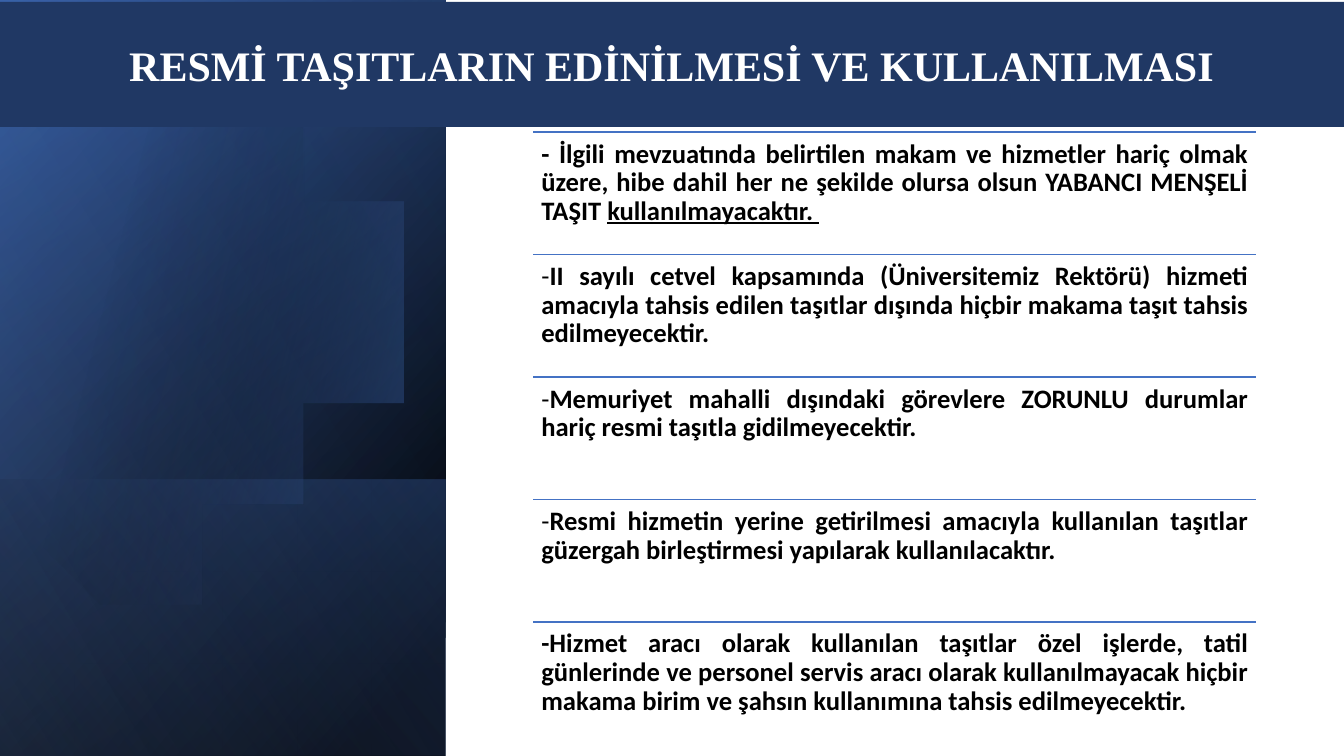
import math

import pptx
import pptx.dml.color
import pptx.enum.shapes
import pptx.enum.text
import pptx.oxml.ns
import pptx.util
from lxml import etree

WIDTH, HEIGHT = 13.33, 7.5
PANEL_WIDTH = 4.42
RULES_LEFT, RULES_TOP, RULES_WIDTH, RULE_STEP = 5.29, 1.31, 7.17, 1.215
BLACK, WHITE, NAVY, BLUE = "000000", "FFFFFF", "203864", "4472C4"
RECTANGLE = pptx.enum.shapes.MSO_SHAPE.RECTANGLE
ALIGN = pptx.enum.text.PP_ALIGN
ANCHOR = pptx.enum.text.MSO_ANCHOR
qn = pptx.oxml.ns.qn

# Each rule is a list of (text, bold, underline)
RULES = [
    [("- İlgili mevzuatında belirtilen makam ve hizmetler hariç olmak üzere, "
      "hibe dahil her ne şekilde olursa olsun YABANCI MENŞELİ TAŞIT ", True, False),
     ("kullanılmayacaktır. ", True, True)],
    [("-", False, False),
     ("II sayılı cetvel kapsamında (Üniversitemiz Rektörü) hizmeti amacıyla tahsis "
      "edilen taşıtlar dışında hiçbir makama taşıt tahsis edilmeyecektir.", True, False)],
    [("-", False, False),
     ("Memuriyet mahalli dışındaki görevlere ZORUNLU durumlar hariç resmi taşıtla "
      "gidilmeyecektir.", True, False)],
    [("-", False, False),
     ("Resmi hizmetin yerine getirilmesi amacıyla kullanılan taşıtlar güzergah "
      "birleştirmesi yapılarak kullanılacaktır. ", True, False)],
    [("-Hizmet aracı olarak kullanılan taşıtlar özel işlerde, tatil günlerinde ve "
      "personel servis aracı olarak kullanılmayacak hiçbir makama birim ve şahsın "
      "kullanımına tahsis edilmeyecektir. ", True, False)],
]


def inches(*lengths):
    return [pptx.util.Inches(length) for length in lengths]


def color(hex_value):
    return pptx.dml.color.RGBColor.from_string(hex_value)


def plain(shape):
    shape.shadow.inherit = False
    shape.line.fill.background()
    return shape


def block(slide, left, top, width, height, fill):
    shape = plain(slide.shapes.add_shape(RECTANGLE, *inches(left, top, width, height)))
    shape.fill.solid()
    shape.fill.fore_color.rgb = color(fill)
    return shape


def shade(shape, angle, *stops):
    """Fill with two stops (position %, colour, opacity %) at a clockwise angle."""
    shape.fill.gradient()
    shape.fill.gradient_angle = 360 - angle
    for stop, (position, hex_value, _) in zip(shape.fill.gradient_stops, stops):
        stop.position = position / 100
        stop.color.rgb = color(hex_value)
    fills = shape._element.spPr.iter(qn("a:srgbClr"))
    for node, (_, _, opacity) in zip(fills, stops):
        if opacity < 100:
            etree.SubElement(node, qn("a:alpha")).set("val", str(opacity * 1000))


def panel_layer(slide, top, height, angle, *stops):
    """A mirrored quarter-turned rectangle that covers the left panel from top down."""
    left = (PANEL_WIDTH - height) / 2
    turned_top = top + (height - PANEL_WIDTH) / 2
    layer = plain(slide.shapes.add_shape(
        RECTANGLE, *inches(left, turned_top, height, PANEL_WIDTH)))
    layer.rotation = 90
    layer._element.spPr.find(qn("a:xfrm")).set("flipH", "1")
    shade(layer, angle, *stops)


def clipped_disc(slide, center_x, center_y, radius, cut_x, angle, *stops):
    """A disc cut off by a vertical chord at cut_x."""
    reach = math.acos((cut_x - center_x) / radius)
    steps = 90
    arc = [(center_x + radius * math.cos(turn), center_y + radius * math.sin(turn))
           for turn in (reach * (2 * i / steps - 1) for i in range(steps + 1))]
    builder = slide.shapes.build_freeform(*arc[0], scale=pptx.util.Inches(1))
    builder.add_line_segments(arc[1:], close=True)
    shade(plain(builder.convert_to_shape()), angle, *stops)


def separator(slide, left, top, width):
    line = slide.shapes.add_connector(
        pptx.enum.shapes.MSO_CONNECTOR.STRAIGHT, *inches(left, top, left + width, top))
    line.line.color.rgb = color(BLUE)
    line.line.width = pptx.util.Pt(1)
    etree.SubElement(line._element.spPr, qn("a:effectLst"))


def write(shape, runs, *, font, size, ink, align, anchor, spacing=1.0, inset=0.1):
    frame = shape.text_frame
    frame.word_wrap = True
    frame.vertical_anchor = anchor
    frame.margin_left = frame.margin_right = pptx.util.Inches(inset)
    frame.margin_top = frame.margin_bottom = pptx.util.Inches(min(inset, 0.08))
    paragraph = frame.paragraphs[0]
    paragraph.alignment = align
    paragraph.line_spacing = spacing
    for text, bold, underline in runs:
        run = paragraph.add_run()
        run.text = text
        run.font.name, run.font.size = font, pptx.util.Pt(size)
        run.font.bold, run.font.underline = bold, underline
        run.font.color.rgb = color(ink)


def main():
    deck = pptx.Presentation()
    deck.slide_width, deck.slide_height = inches(WIDTH, HEIGHT)
    slide = deck.slides.add_slide(deck.slide_layouts[6])
    block(slide, 0, 0, WIDTH, HEIGHT, WHITE)

    # Left panel: layered gradients around a disc
    panel_layer(slide, 0, HEIGHT, 50, (8, BLACK, 100), (100, "2F5597", 100))
    panel_layer(slide, 0, HEIGHT, 30, (0, BLACK, 0), (99, BLUE, 46))
    panel_layer(slide, 4.76, 2.74, 130, (2, BLUE, 29), (100, BLACK, 30))
    clipped_disc(slide, 1.4, 3.38, 2.3, -0.15, 14, (29, BLACK, 0), (100, BLUE, 43))
    panel_layer(slide, 0, HEIGHT, 120, (0, BLACK, 0), (99, "8FAADC", 11))

    # Rules, each under its separator
    for row, runs in enumerate(RULES):
        top = RULES_TOP + row * RULE_STEP
        separator(slide, RULES_LEFT, top, RULES_WIDTH)
        rule = slide.shapes.add_textbox(*inches(RULES_LEFT, top, RULES_WIDTH, RULE_STEP))
        write(rule, runs, font="Calibri", size=19, ink=BLACK, align=ALIGN.JUSTIFY,
              anchor=ANCHOR.TOP, spacing=0.9, inset=0.08)

    # Title band
    title = block(slide, 0, 0.02, WIDTH, 1.24, NAVY)
    write(title, [("RESMİ TAŞITLARIN EDİNİLMESİ VE KULLANILMASI", True, False)],
          font="Times New Roman", size=30, ink=WHITE, align=ALIGN.CENTER,
          anchor=ANCHOR.MIDDLE)

    deck.save("out.pptx")


if __name__ == "__main__":
    main()
